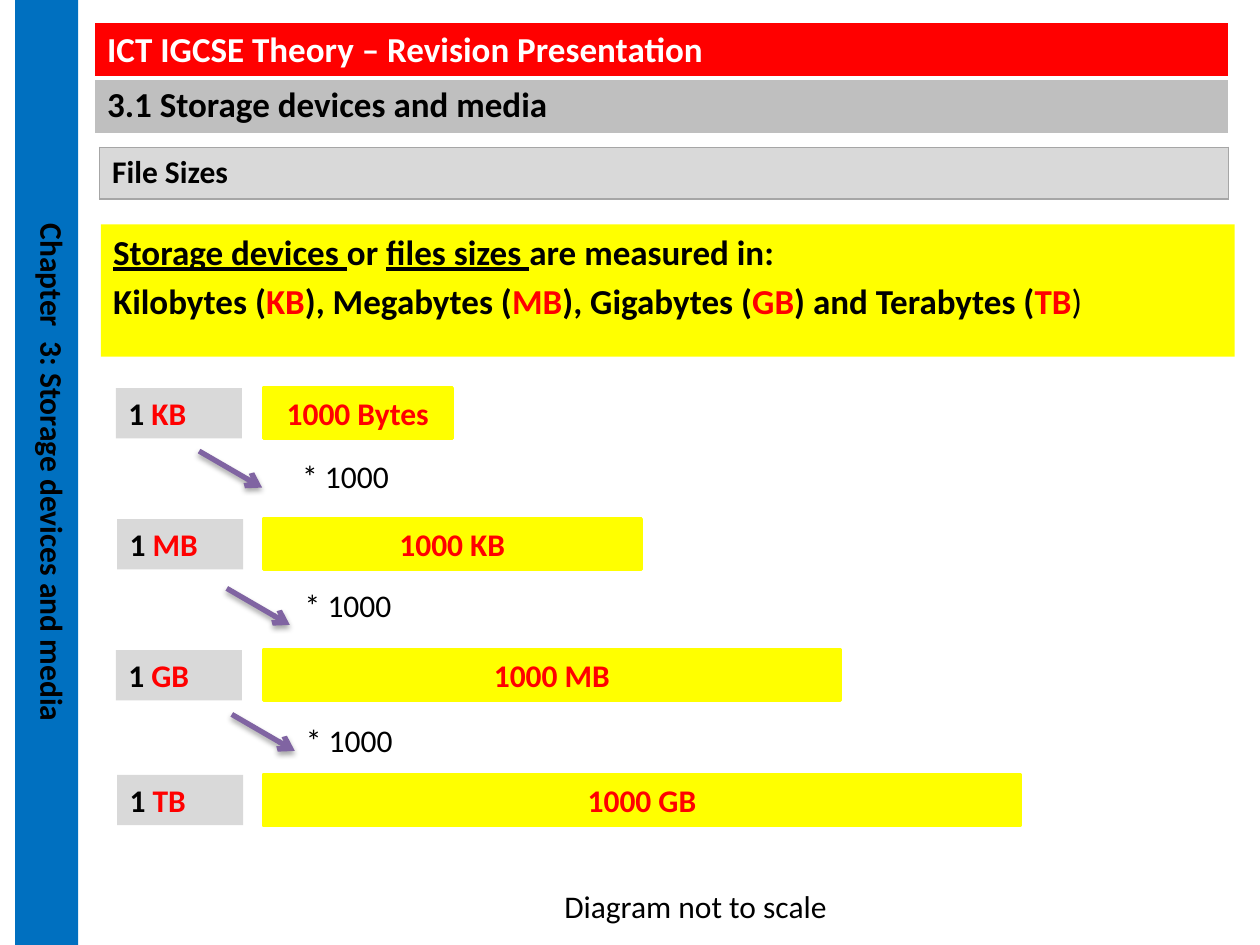
import lxml.etree
import pptx
import pptx.dml.color
import pptx.enum.shapes
import pptx.enum.text
import pptx.oxml
import pptx.oxml.ns
import pptx.util

Inches = pptx.util.Inches
ALIGN = pptx.enum.text.PP_ALIGN
ANCHOR = pptx.enum.text.MSO_ANCHOR
NAMESPACE = pptx.oxml.ns.nsdecls("a")
COLORS = {
    "black": "000000", "white": "FFFFFF", "red": "FF0000", "blue": "0070C0",
    "yellow": "FFFF00", "silver": "BFBFBF", "pale": "D9D9D9",
    "border": "A6A6A6", "purple": "8064A2",
}


def rgb(name):
    return pptx.dml.color.RGBColor.from_string(COLORS[name])


class SlideBuilder:
    """Hold the text style and the current slide, and add its elements."""

    def __init__(self, page, font="Calibri"):
        self.page = page
        self.font = font

    def add_spans(self, para, spans, size=18, align=ALIGN.LEFT):
        para.alignment = align
        for text, color, bold, underline in spans:
            span = para.add_run()
            span.text = text
            span.font.name = self.font
            span.font.size = pptx.util.Pt(size)
            span.font.bold = bold
            span.font.underline = underline
            span.font.color.rgb = rgb(color)

    def table(self, left, top, width, row_height, rows, size):
        frame = self.page.shapes.add_table(
            len(rows), 1, Inches(left), Inches(top),
            Inches(width), Inches(row_height * len(rows)))
        table = frame.table
        table.first_row = table.horz_banding = False
        for index, (text, color, fill, border, bottom) in enumerate(rows):
            cell = table.cell(index, 0)
            self.add_spans(cell.text_frame.paragraphs[0], [(text, color, True, False)], size)
            properties = cell._tc.get_or_add_tcPr()
            for side, points in zip("LRTB", (1, 1, 1, bottom)):
                properties.append(pptx.oxml.parse_xml(
                    f'<a:ln{side} {NAMESPACE} w="{points * 12700}"><a:solidFill>'
                    f'<a:srgbClr val="{COLORS[border]}"/></a:solidFill></a:ln{side}>'))
            cell.fill.solid()
            cell.fill.fore_color.rgb = rgb(fill)

    def box(self, left, top, width, height, fill, lines, size=18,
            align=ALIGN.LEFT, anchor=ANCHOR.TOP, outline=None, vertical=False):
        box = self.page.shapes.add_shape(
            pptx.enum.shapes.MSO_SHAPE.RECTANGLE,
            Inches(left), Inches(top), Inches(width), Inches(height))
        box.shadow.inherit = False
        box.fill.solid()
        box.fill.fore_color.rgb = rgb(fill)
        if outline:
            box.line.color.rgb = rgb(outline)
            box.line.width = pptx.util.Pt(2)
        else:
            box.line.fill.background()
        frame = box.text_frame
        frame.word_wrap = True
        frame.vertical_anchor = anchor
        if vertical:
            frame._txBody.bodyPr.set("vert", "vert")
        for index, spans in enumerate(lines):
            para = frame.add_paragraph() if index else frame.paragraphs[0]
            if index:
                para.space_before = pptx.util.Pt(size * 0.2)
            self.add_spans(para, spans, size, align)

    def label(self, left, top, width, height, text):
        box = self.page.shapes.add_textbox(
            Inches(left), Inches(top), Inches(width), Inches(height))
        box.text_frame.word_wrap = True
        self.add_spans(box.text_frame.paragraphs[0], [(text, "black", False, False)])

    def arrow(self, left, top, width=0.5, height=0.29):
        arrow = self.page.shapes.add_connector(
            pptx.enum.shapes.MSO_CONNECTOR.STRAIGHT, Inches(left), Inches(top),
            Inches(left + width), Inches(top + height))
        arrow.line.color.rgb = rgb("purple")
        arrow.line.width = pptx.util.Pt(3)
        lxml.etree.SubElement(
            arrow.line._get_or_add_ln(), pptx.oxml.ns.qn("a:tailEnd"), type="arrow")
        arrow._element.spPr.append(pptx.oxml.parse_xml(
            f'<a:effectLst {NAMESPACE}><a:outerShdw blurRad="40000" dist="23000" '
            'dir="5400000" rotWithShape="0"><a:srgbClr val="000000">'
            '<a:alpha val="35000"/></a:srgbClr></a:outerShdw></a:effectLst>'))


def main():
    deck = pptx.Presentation()
    deck.slide_width, deck.slide_height = Inches(10), Inches(7.5)
    slide = SlideBuilder(deck.slides.add_slide(deck.slide_layouts[6]))

    slide.table(0.75, 0.18, 9, 0.43, [
        ("ICT IGCSE Theory – Revision Presentation", "white", "red", "white", 3),
        ("3.1 Storage devices and media", "black", "silver", "white", 1),
    ], 20)
    slide.box(0.12, 0, 0.5, 7.5, "blue",
              [[("Chapter  3: Storage devices and media", "black", True, False)]],
              align=ALIGN.CENTER, vertical=True)
    slide.table(0.79, 1.17, 8.96, 0.41,
                [("File Sizes", "black", "pale", "border", 1)], 18)

    units = []
    for lead, unit in (("Kilobytes (", "KB"), ("), Megabytes (", "MB"),
                       ("), Gigabytes (", "GB"), (") and Terabytes (", "TB")):
        units += [(lead, "black", True, False), (unit, "red", True, False)]
    slide.box(0.8, 1.78, 9, 1.05, "yellow", [
        [("Storage devices ", "black", True, True), ("or ", "black", True, False),
         ("files sizes ", "black", True, True),
         ("are measured in:", "black", True, False)],
        units + [(")", "black", False, False)],
    ], size=20)

    for unit, amount, left, top, width in (
            ("KB", "1000 Bytes", 0.92, 3.08, 1.5), ("MB", "1000 KB", 0.93, 4.12, 3),
            ("GB", "1000 MB", 0.92, 5.16, 4.58), ("TB", "1000 GB", 0.93, 6.15, 6.01)):
        slide.box(left, top, 1, 0.4, "pale",
                  [[("1 ", "black", True, False), (unit, "red", True, False)]])
        slide.box(2.09, top, width, 0.4, "yellow", [[(amount, "red", True, False)]],
                  align=ALIGN.CENTER, anchor=ANCHOR.MIDDLE, outline="yellow")

    for arrow_left, arrow_top, label_left, label_top in (
            (1.58, 3.58, 2.3, 3.58), (1.8, 4.67, 2.32, 4.6), (1.84, 5.67, 2.33, 5.67)):
        slide.arrow(arrow_left, arrow_top)
        slide.label(label_left, label_top, 0.95, 0.42, "* 1000")
    slide.label(4.38, 6.99, 2.62, 0.4, "Diagram not to scale")

    deck.save("out.pptx")


if __name__ == "__main__":
    main()
